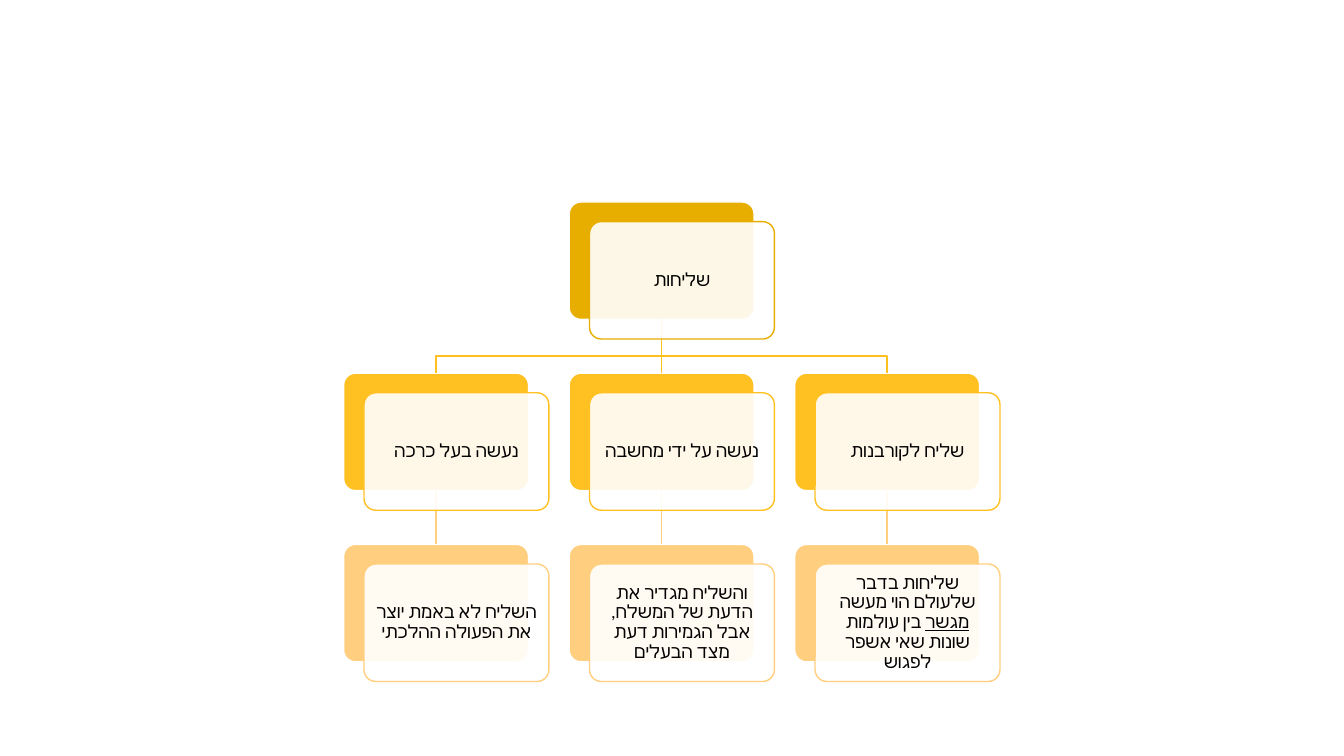
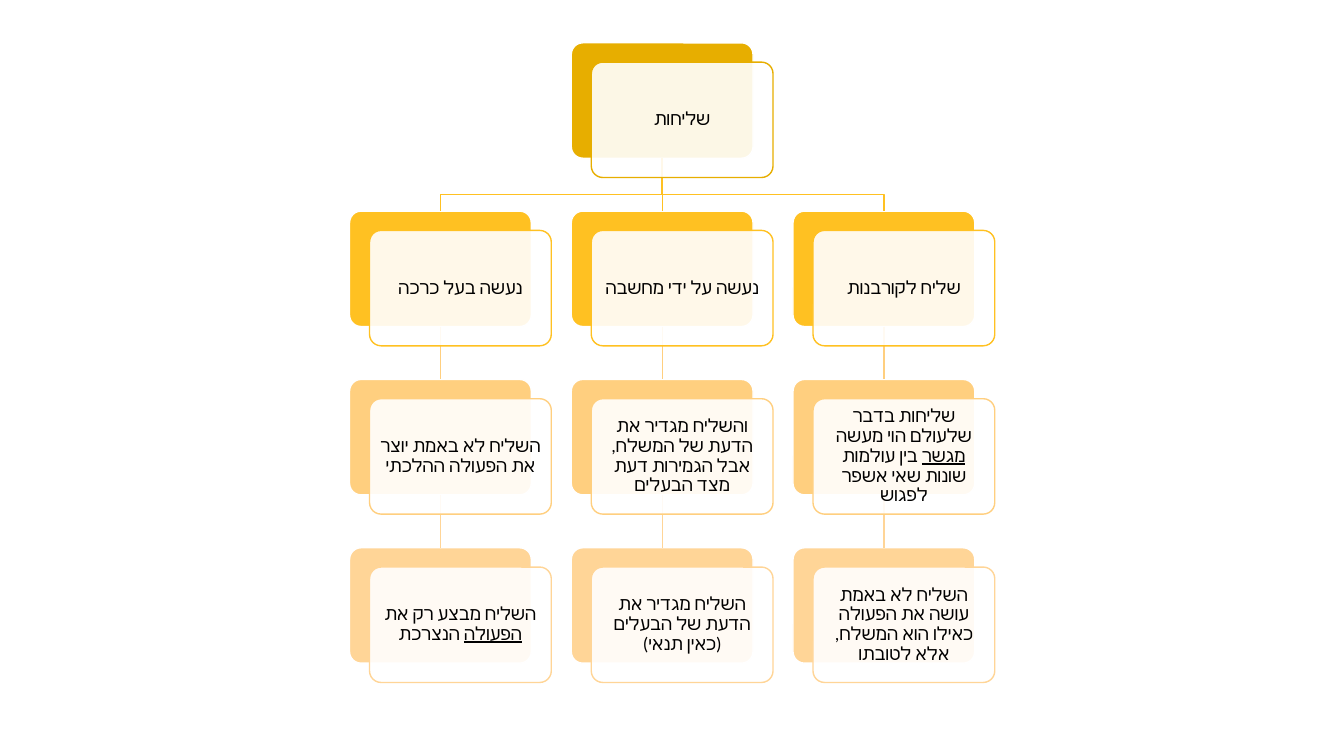
from pptx import Presentation
from pptx.dml.color import RGBColor
from pptx.enum.shapes import MSO_CONNECTOR, MSO_SHAPE
from pptx.enum.text import MSO_ANCHOR, PP_ALIGN
from pptx.oxml.ns import qn
from pptx.util import Cm, Pt
from lxml.etree import SubElement

WHITE = RGBColor(0xFF, 0xFF, 0xFF)
BLACK = RGBColor(0x00, 0x00, 0x00)
LEVEL_COLORS = [
    RGBColor(0xE7, 0xAE, 0x00),
    RGBColor(0xFF, 0xC1, 0x22),
    RGBColor(0xFF, 0xCF, 0x7F),
    RGBColor(0xFF, 0xD5, 0x97),
]
FONT = "Calibri"
LINE_WIDTH = Pt(1)
TOP, BOTTOM = 0, 2  # connection sites of a rectangle

# Proportions of the tree, in block widths
BLOCK_HEIGHT = 0.635
COLUMN_STEP = 1.22
ROW_STEP = 0.926
CARD_RIGHT, CARD_DOWN = 0.11, 0.106
BEND_SHARE = 0.68  # part of the row gap above the bend

# Each text is a tuple of runs; every second run is underlined
ROOT = ("שליחות",)
HEADINGS = [("נעשה בעל כרכה",), ("נעשה על ידי מחשבה",), ("שליח לקורבנות",)]
EXPLANATIONS = [
    ("השליח לא באמת יוצר את הפעולה ההלכתי",),
    ("והשליח מגדיר את הדעת של המשלח, אבל הגמירות דעת מצד הבעלים",),
    ("שליחות בדבר שלעולם הוי מעשה ", "מגשר", " בין עולמות שונות שאי אשפר לפגוש"),
]
CONCLUSIONS = [
    ("השליח מבצע רק את ", "הפעולה", " הנצרכת"),
    ("השליח מגדיר את הדעת של הבעלים (כאין תנאי)",),
    ("השליח לא באמת עושה את הפעולה כאילו הוא המשלח, אלא לטובתו",),
]


def write_text(shape, runs, size=13, color=BLACK, align=PP_ALIGN.CENTER, margin=0.13):
    """Write right-to-left text, centred vertically in the shape."""
    frame = shape.text_frame
    frame.word_wrap = True
    frame.vertical_anchor = MSO_ANCHOR.MIDDLE
    frame.margin_left = frame.margin_right = Cm(margin)
    frame.margin_top = frame.margin_bottom = Cm(margin)
    paragraph = frame.paragraphs[0]
    paragraph.alignment = align
    paragraph.line_spacing = 0.9
    paragraph._p.get_or_add_pPr().set("rtl", "1")
    for index, text in enumerate(runs):
        run = paragraph.add_run()
        run.text = text
        run.font.size = Pt(size)
        run.font.name = FONT
        run.font.color.rgb = color
        if index % 2:
            run.font.underline = True
        SubElement(run._r.get_or_add_rPr(), qn("a:cs"), typeface=FONT)


def add_block(slide, left, top, width, fill, line, opacity=100):
    """Add a rounded rectangle in the proportions of the tree."""
    shape = slide.shapes.add_shape(
        MSO_SHAPE.ROUNDED_RECTANGLE,
        Cm(left), Cm(top), Cm(width), Cm(width * BLOCK_HEIGHT))
    shape.adjustments[0] = 0.1
    shape.shadow.inherit = False
    shape.fill.solid()
    shape.fill.fore_color.rgb = fill
    shape.line.color.rgb = line
    shape.line.width = LINE_WIDTH
    if opacity < 100:
        fill_color = shape._element.spPr.find(qn("a:solidFill")).find(qn("a:srgbClr"))
        SubElement(fill_color, qn("a:alpha"), val=str(opacity * 1000))
    return shape


def add_link(slide, parent, child, color):
    """Join a parent's bottom to a child's top, with bends where they differ."""
    start_x, start_y = parent.left + parent.width // 2, parent.top + parent.height
    end_x, end_y = child.left + child.width // 2, child.top
    if parent.left == child.left:
        link = slide.shapes.add_connector(
            MSO_CONNECTOR.STRAIGHT, start_x, start_y, end_x, end_y)
        link.begin_connect(parent, BOTTOM)
        link.end_connect(child, TOP)
        SubElement(link._element.spPr, qn("a:effectLst"))
    else:
        bend_y = start_y + round((end_y - start_y) * BEND_SHARE)
        builder = slide.shapes.build_freeform(start_x, start_y)
        builder.add_line_segments(
            [(start_x, bend_y), (end_x, bend_y), (end_x, end_y)], close=False)
        link = builder.convert_to_shape()
        link.shadow.inherit = False
        link.fill.background()
    link.line.color.rgb = color
    link.line.width = LINE_WIDTH


def add_tree(slide, left, top, width, rows):
    """Draw a root over equal columns inside the given left, top and width."""
    columns = len(rows[0])
    block_width = width / ((columns - 1) * COLUMN_STEP + 1 + CARD_RIGHT)
    middle = columns // 2
    nodes = [(0, middle, ROOT)] + [
        (level, column, runs)
        for level, row in enumerate(rows, start=1)
        for column, runs in enumerate(row)]

    def place(level, column):
        return (left + column * COLUMN_STEP * block_width,
                top + level * ROW_STEP * block_width)

    # Coloured blocks at the back
    blocks = {}
    for level, column, _ in nodes:
        x, y = place(level, column)
        blocks[level, column] = add_block(
            slide, x, y, block_width, LEVEL_COLORS[level], WHITE)

    # Links between levels
    for level, column, _ in nodes[1:]:
        parent_column = middle if level == 1 else column
        add_link(slide, blocks[level - 1, parent_column],
                 blocks[level, column], LEVEL_COLORS[level])

    # Translucent cards with the text
    for level, column, runs in nodes:
        x, y = place(level, column)
        card = add_block(
            slide, x + CARD_RIGHT * block_width, y + CARD_DOWN * block_width,
            block_width, WHITE, LEVEL_COLORS[level], opacity=90)
        write_text(card, runs)


def add_tree_slide(presentation, left, top, width, rows):
    blank_layout = presentation.slide_layouts[6]
    slide = presentation.slides.add_slide(blank_layout)
    add_tree(slide, left, top, width, rows)


def main():
    presentation = Presentation()
    presentation.slide_width = Cm(33.87)
    presentation.slide_height = Cm(19.05)
    add_tree_slide(presentation, 8.66, 5.09, 16.54, [HEADINGS, EXPLANATIONS])
    add_tree_slide(presentation, 8.81, 1.08, 16.26,
                   [HEADINGS, EXPLANATIONS, CONCLUSIONS])
    presentation.save("out.pptx")


if __name__ == "__main__":
    main()
